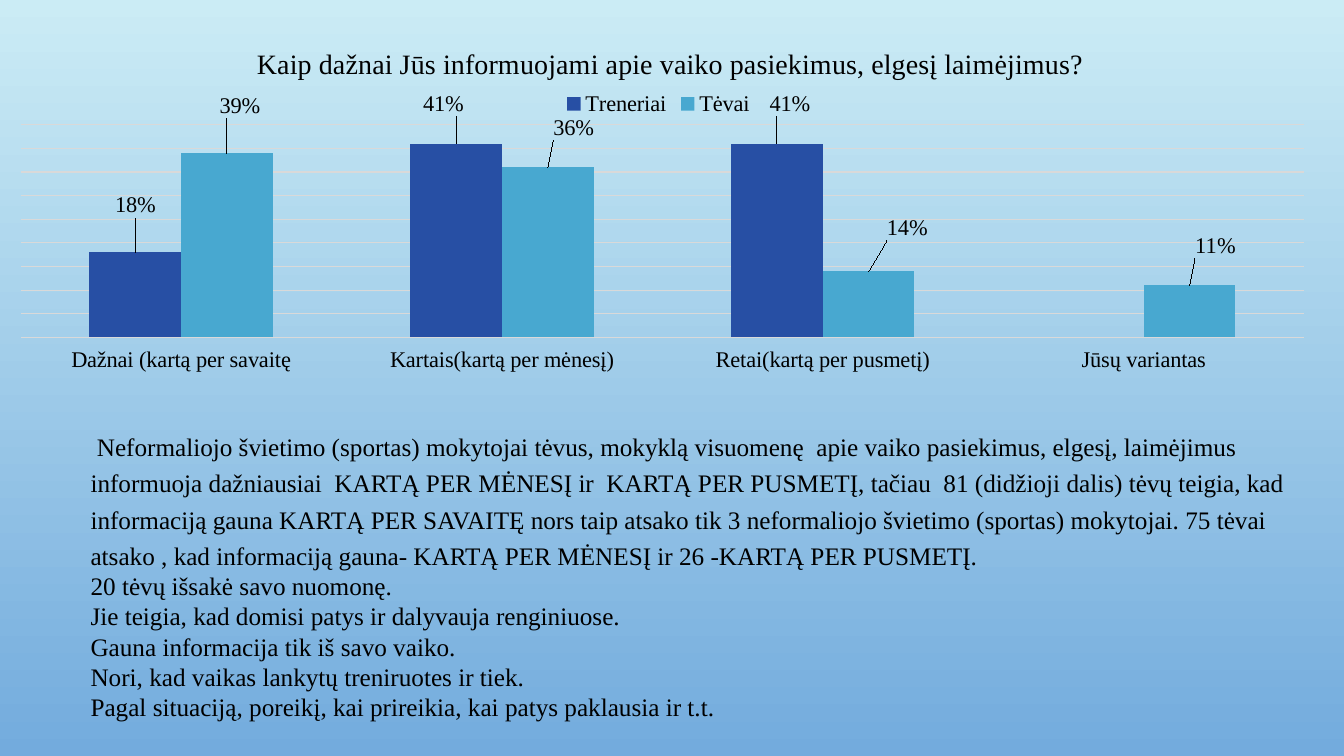
from dataclasses import dataclass

from lxml.etree import SubElement
from pptx import Presentation
from pptx.chart.chart import Chart
from pptx.chart.data import CategoryChartData
from pptx.dml.color import RGBColor
from pptx.enum.chart import XL_CHART_TYPE, XL_LABEL_POSITION, XL_LEGEND_POSITION
from pptx.enum.chart import XL_TICK_LABEL_POSITION, XL_TICK_MARK
from pptx.oxml import parse_xml
from pptx.oxml.ns import nsdecls, qn
from pptx.slide import Slide
from pptx.text.text import Font, TextFrame
from pptx.util import Inches, Pt


@dataclass(frozen=True)
class Theme:
    face: str = "Times New Roman"
    ink: str = "000000"
    grid: str = "D9D9D9"
    sky: tuple[str, str] = ("CBECF5", "73ABDD")
    title: int = 20
    body: int = 18
    label: int = 16


@dataclass(frozen=True)
class Group:
    """One series; shifts move its labels by fractions of the chart."""
    name: str
    color: str
    values: tuple[float | None, ...]
    shifts: tuple[tuple[float, float], ...]


THEME = Theme()
TITLE = "Kaip dažnai Jūs informuojami apie vaiko pasiekimus, elgesį laimėjimus?"
ANSWERS = (
    "Dažnai (kartą per savaitę",
    "Kartais(kartą per mėnesį)",
    "Retai(kartą per pusmetį)",
    "Jūsų variantas",
)
GROUPS = (
    Group("Treneriai", "274FA4", (0.18, 0.41, 0.41, None),
          ((0, -0.08), (-0.01, -0.06), (0.01, -0.06))),
    Group("Tėvai", "48A8D0", (0.39, 0.36, 0.14, 0.11),
          ((0.01, -0.08), (0.02, -0.06), (0.03, -0.07), (0.02, -0.06))),
)
SUMMARY = (
    " Neformaliojo švietimo (sportas) mokytojai tėvus, mokyklą visuomenę  apie "
    "vaiko pasiekimus, elgesį, laimėjimus informuoja dažniausiai  KARTĄ PER MĖNESĮ "
    "ir  KARTĄ PER PUSMETĮ, tačiau  81 (didžioji dalis) tėvų teigia, kad informaciją "
    "gauna KARTĄ PER SAVAITĘ nors taip atsako tik 3 neformaliojo švietimo (sportas) "
    "mokytojai. 75 tėvai atsako , kad informaciją gauna- KARTĄ PER MĖNESĮ ir "
    "26 -KARTĄ PER PUSMETĮ."
)
REMARKS = (
    "20 tėvų išsakė savo nuomonę.",
    "Jie teigia, kad domisi patys ir dalyvauja renginiuose.",
    "Gauna informacija tik iš savo vaiko.",
    "Nori, kad vaikas lankytų treniruotes ir tiek.",
    "Pagal situaciją, poreikį, kai prireikia, kai patys paklausia ir t.t.",
)


def style(font: Font, size: int) -> None:
    font.name, font.size, font.bold = THEME.face, Pt(size), False
    font.color.rgb = RGBColor.from_string(THEME.ink)


def write(frame: TextFrame, text: str, *, size: int, spacing: float = 1.0,
          first: bool = False) -> None:
    para = frame.paragraphs[0] if first else frame.add_paragraph()
    para.line_spacing = spacing
    run = para.add_run()
    run.text = text
    style(run.font, size)


def place(parent, after: str, **spots: float | str) -> None:
    """Put a manual layout behind the named child of a chart element."""
    for old in parent.findall(qn("c:layout")):
        parent.remove(old)
    layout = parse_xml(f"<c:layout {nsdecls('c')}/>")
    manual = SubElement(layout, qn("c:manualLayout"))
    for tag, value in spots.items():
        SubElement(manual, qn(f"c:{tag}")).set("val", str(value))
    anchor = parent.find(qn(after)) if after else None
    if anchor is None:
        parent.insert(0, layout)
    else:
        anchor.addnext(layout)


def paint(slide: Slide) -> None:
    fill = slide.background.fill
    fill.gradient()
    fill.gradient_angle = 270
    for stop, color, spot in zip(fill.gradient_stops, THEME.sky, (0, 1)):
        stop.color.rgb = RGBColor.from_string(color)
        stop.position = spot


def set_axes(chart: Chart) -> None:
    cats = chart.category_axis
    style(cats.tick_labels.font, THEME.label)
    cats.format.line.fill.background()
    cats.major_tick_mark = XL_TICK_MARK.NONE
    cats.tick_label_position = XL_TICK_LABEL_POSITION.LOW
    share = chart.value_axis
    share.minimum_scale, share.maximum_scale, share.major_unit = 0, 0.45, 0.05
    line = share.major_gridlines.format.line
    line.width = Pt(0.75)
    line.color.rgb = RGBColor.from_string(THEME.grid)
    share.visible = False


def set_bars(chart: Chart) -> None:
    plot = chart.plots[0]
    plot.gap_width, plot.overlap, plot.vary_by_categories = 150, 0, False
    for group, bars in zip(GROUPS, plot.series):
        bars.format.fill.solid()
        bars.format.fill.fore_color.rgb = RGBColor.from_string(group.color)
        labels = bars.data_labels
        labels.show_value = True
        labels.number_format, labels.number_format_is_linked = "0%", False
        style(labels.font, THEME.label)
        for index in range(len(group.shifts)):
            label = bars.points[index].data_label
            style(label.font, THEME.label)
            label.position = XL_LABEL_POSITION.OUTSIDE_END
        for node, (x, y) in zip(bars._element.xpath(".//c:dLbl"), group.shifts):
            place(node, "c:idx", x=x, y=y)


def add_survey(slide: Slide) -> None:
    data = CategoryChartData(number_format="0%")
    data.categories = ANSWERS
    for group in GROUPS:
        data.add_series(group.name, group.values)
    chart = slide.shapes.add_chart(
        XL_CHART_TYPE.COLUMN_CLUSTERED, Inches(0.2), Inches(0.22),
        Inches(12.74), Inches(3.77), data).chart
    style(chart.font, THEME.label)
    chart.has_title = True
    write(chart.chart_title.text_frame, TITLE, size=THEME.title, first=True)
    chart.has_legend = True
    legend = chart.legend
    legend.position = XL_LEGEND_POSITION.TOP
    legend.include_in_layout = False
    style(legend.font, THEME.label)
    set_axes(chart)
    set_bars(chart)
    area = chart._chartSpace.chart
    edge = {"xMode": "edge", "yMode": "edge"}
    place(area.find(qn("c:title")), "c:tx", **edge, x=0.18, y=0.05)
    place(area.find(qn("c:legend")), "c:legendPos", **edge, x=0.42, y=0.17)
    place(area.plotArea, "", layoutTarget="inner", **edge,
          x=0, y=0.27, w=1, h=0.56)


def add_notes(slide: Slide) -> None:
    frame = slide.shapes.add_textbox(
        Inches(0.8), Inches(4.17), Inches(12.54), Inches(2.98)).text_frame
    frame.word_wrap = True
    write(frame, SUMMARY, size=THEME.body, spacing=1.2, first=True)
    for remark in REMARKS:
        write(frame, remark, size=THEME.body)


def main() -> None:
    deck = Presentation()
    deck.slide_width, deck.slide_height = Inches(13.33), Inches(7.5)
    slide = deck.slides.add_slide(deck.slide_layouts[6])
    paint(slide)
    add_notes(slide)
    add_survey(slide)
    deck.save("out.pptx")


if __name__ == "__main__":
    main()
